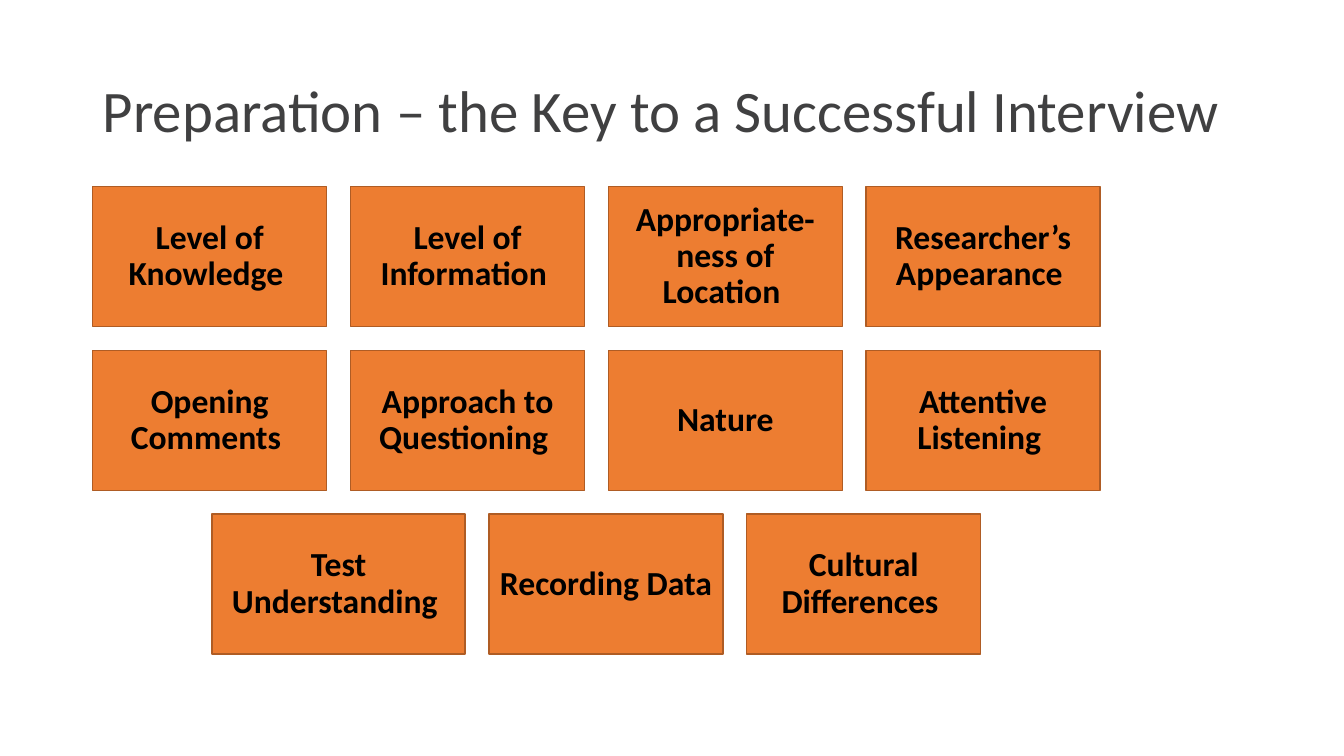
from pptx import Presentation
from pptx.dml.color import RGBColor
from pptx.enum.shapes import MSO_SHAPE
from pptx.enum.text import MSO_ANCHOR, MSO_AUTO_SIZE, PP_ALIGN
from pptx.util import Inches, Pt

COLORS = {"title": "404041", "fill": "ED7D31", "line": "AF5C24", "text": "000000"}
FONT = "Calibri"
TITLE = "Preparation – the Key to a Successful Interview"
CARD = 2.32
WIDE = 2.51
HIGH = 1.39
ROWS = [
    [("Level of Knowledge ", CARD), ("Level of Information ", CARD),
     ("Appropriate-ness of Location ", CARD), ("Researcher’s Appearance ", CARD)],
    [("Opening Comments ", CARD), ("Approach to Questioning ", CARD),
     ("Nature", CARD), ("Attentive Listening ", CARD)],
    [("Test Understanding ", WIDE), ("Recording Data ", CARD),
     ("Cultural Differences ", CARD)],
]


def color(name):
    """Return the named colour."""
    return RGBColor.from_string(COLORS[name])


def write(frame, text, size, tint, align, bold=False):
    """Write one paragraph, centred vertically, into a text frame."""
    frame.word_wrap = True
    frame.auto_size = MSO_AUTO_SIZE.NONE
    frame.vertical_anchor = MSO_ANCHOR.MIDDLE
    para = frame.paragraphs[0]
    para.alignment = align
    para.line_spacing = 0.9
    run = para.add_run()
    run.text = text
    font = run.font
    font.name, font.size, font.bold = FONT, Pt(size), bold
    font.color.rgb = color(tint)


def add_title(slide, box):
    """Place the slide title in the given box."""
    title = slide.shapes.title
    title.left, title.top, title.width, title.height = map(Inches, box)
    write(title.text_frame, TITLE, 42, "title", PP_ALIGN.LEFT)


def add_card(slide, box, text):
    """Draw one labelled card in the given box."""
    card = slide.shapes.add_shape(MSO_SHAPE.RECTANGLE, *map(Inches, box))
    card.shadow.inherit = False
    card.fill.solid()
    card.fill.fore_color.rgb = color("fill")
    card.line.color.rgb = color("line")
    card.line.width = Pt(1)
    frame = card.text_frame
    frame.margin_left = frame.margin_right = Inches(0.09)
    frame.margin_top = frame.margin_bottom = Inches(0.1)
    write(frame, text, 24, "text", PP_ALIGN.CENTER, True)


def add_board(slide, box):
    """Fill the box with evenly spaced rows of cards, each row centred."""
    left, top, width, height = box
    gap = (width - 4 * CARD) / 3
    step = (height - HIGH) / (len(ROWS) - 1)
    for index, row in enumerate(ROWS):
        span = sum(wide for _, wide in row) + gap * (len(row) - 1)
        x = left + (width - span) / 2
        for text, wide in row:
            add_card(slide, (x, top + index * step, wide, HIGH), text)
            x += wide + gap


def main():
    """Build and save the slide."""
    deck = Presentation()
    deck.slide_width, deck.slide_height = Inches(13.33), Inches(7.5)
    slide = deck.slides.add_slide(deck.slide_layouts[5])
    add_title(slide, (0.92, 0.4, 12.1, 1.45))
    add_board(slide, (0.92, 1.85, 9.99, 4.64))
    deck.save("out.pptx")


if __name__ == "__main__":
    main()
